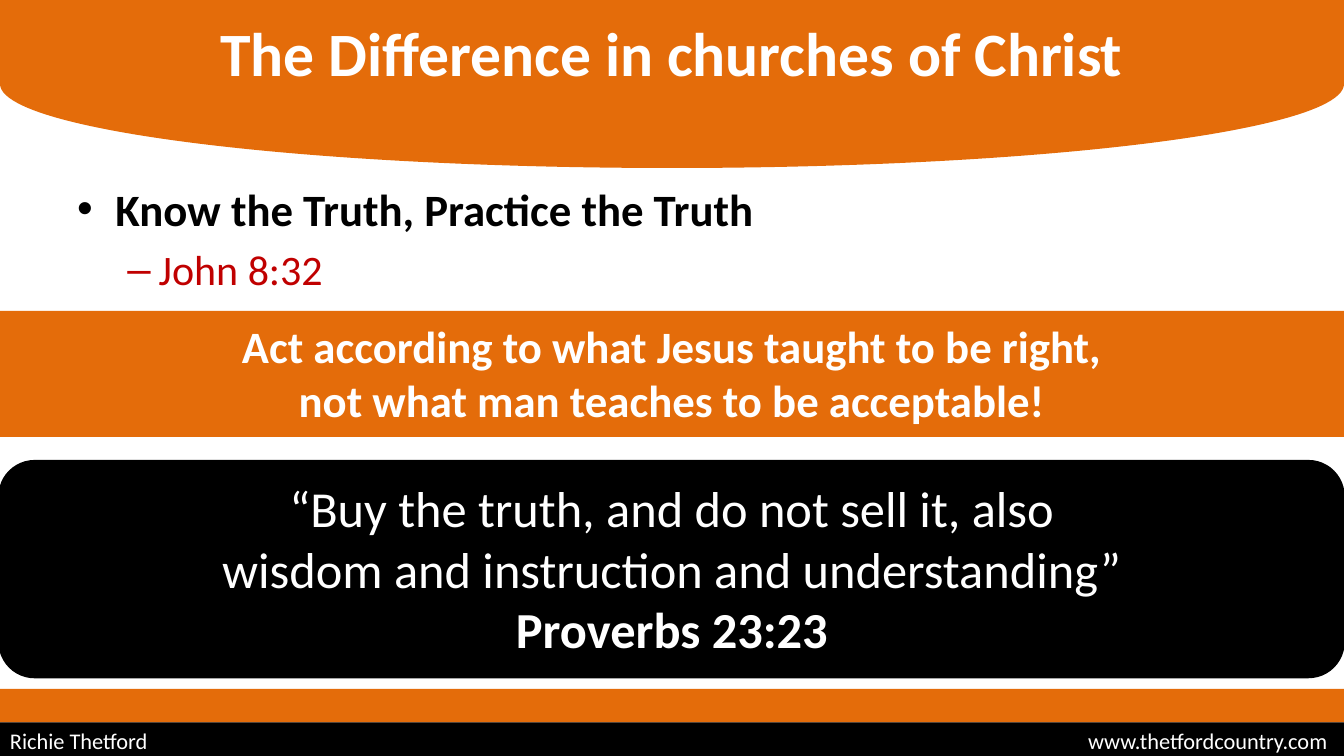
from dataclasses import dataclass

from lxml import etree
from pptx import Presentation
from pptx.dml.color import RGBColor
from pptx.enum.shapes import MSO_SHAPE
from pptx.enum.text import MSO_ANCHOR, PP_ALIGN
from pptx.oxml.ns import qn
from pptx.util import Inches, Pt

RECTANGLE = MSO_SHAPE.RECTANGLE
ROUNDED = MSO_SHAPE.ROUNDED_RECTANGLE
DELAY = MSO_SHAPE.FLOWCHART_DELAY
LEFT, CENTER = PP_ALIGN.LEFT, PP_ALIGN.CENTER
TOP, MIDDLE = MSO_ANCHOR.TOP, MSO_ANCHOR.MIDDLE

COLUMNS, ROWS = 160, 90
CELL = Inches(1) // 12


@dataclass(frozen=True)
class Theme:
    font: str = "Calibri"
    orange: str = "E46C0A"
    black: str = "000000"
    white: str = "FFFFFF"
    red: str = "C00000"
    title: int = 44
    quote: int = 36
    point: int = 32
    reference: int = 30
    footer: int = 16


THEME = Theme()


@dataclass(frozen=True)
class Area:
    column: float
    row: float
    columns: float
    rows: float

    def lengths(self) -> tuple:
        grid = (self.column, self.row, self.columns, self.rows)
        return tuple(round(value * CELL) for value in grid)


@dataclass(frozen=True)
class Band:
    area: Area
    color: str
    kind: int = RECTANGLE
    rotation: int = 0


@dataclass(frozen=True)
class Bullet:
    mark: str
    margin: float
    hanging: float
    level: int = 0


def draw_band(page, band: Band):
    box = page.shapes.add_shape(band.kind, *band.area.lengths())
    box.shadow.inherit = False
    box.rotation = band.rotation
    box.fill.solid()
    box.fill.fore_color.rgb = RGBColor.from_string(band.color)
    box.line.fill.background()
    return box


def add_text_box(page, area: Area, anchor=TOP):
    box = page.shapes.add_textbox(*area.lengths())
    box.text_frame.word_wrap = True
    box.text_frame.vertical_anchor = anchor
    return box


def write(box, text: str, *, size: int, color: str = THEME.white,
          bold: bool = False, align=CENTER, before: float = 0):
    frame = box.text_frame
    para = frame.paragraphs[0]
    if para.runs:
        para = frame.add_paragraph()
    para.alignment = align
    para.space_before = Pt(before)
    for index, line in enumerate(text.split("\n")):
        if index:
            para.add_line_break()
        span = para.add_run()
        span.text = line
        span.font.name = THEME.font
        span.font.size = Pt(size)
        span.font.bold = bold
        span.font.color.rgb = RGBColor.from_string(color)
    return para


def set_bullet(para, bullet: Bullet) -> None:
    para.level = bullet.level
    properties = para._p.get_or_add_pPr()
    properties.set("marL", str(Inches(bullet.margin)))
    properties.set("indent", str(-Inches(bullet.hanging)))
    etree.SubElement(properties, qn("a:buFont")).set("typeface", "Arial")
    etree.SubElement(properties, qn("a:buChar")).set("char", bullet.mark)


def set_right_tab(para, position: float) -> None:
    stops = etree.SubElement(para._p.get_or_add_pPr(), qn("a:tabLst"))
    stop = etree.SubElement(stops, qn("a:tab"))
    stop.set("pos", str(Inches(position)))
    stop.set("algn", "r")


def draw_points(page) -> None:
    box = add_text_box(page, Area(8, 21, 144, 64))
    point = write(box, "Know the Truth, Practice the Truth", size=THEME.point,
                  color=THEME.black, bold=True, align=LEFT)
    set_bullet(point, Bullet("•", 0.38, 0.38))
    reference = write(box, "John 8:32", size=THEME.reference,
                      color=THEME.red, align=LEFT, before=6)
    set_bullet(reference, Bullet("–", 0.81, 0.31, level=1))


def draw_quote(page) -> None:
    draw_band(page, Band(Area(-0.2, 54.75, 160.3, 26), THEME.black, ROUNDED))
    box = add_text_box(page, Area(8, 56.25, 144, 23))
    write(box, "“Buy the truth, and do not sell it, also\n"
               "wisdom and instruction and understanding”", size=THEME.quote)
    write(box, "Proverbs 23:23", size=THEME.quote, bold=True)


def draw_message(page) -> None:
    draw_band(page, Band(Area(0, 37, COLUMNS, 15), THEME.orange))
    box = add_text_box(page, Area(0, 37.4, COLUMNS, 14.2))
    write(box, "Act according to what Jesus taught to be right,\n"
               "not what man teaches to be acceptable!", size=THEME.point, bold=True)


def draw_header(page) -> None:
    depth = 20
    column, row = (COLUMNS - depth) / 2, (depth - COLUMNS) / 2
    draw_band(page, Band(Area(column, row, depth, COLUMNS), THEME.orange, DELAY, 90))
    box = add_text_box(page, Area(0, 1.4, COLUMNS, 9.6), MIDDLE)
    write(box, "The Difference in churches of Christ", size=THEME.title, bold=True)


def draw_footer(page) -> None:
    draw_band(page, Band(Area(0, 82, COLUMNS, 4), THEME.orange))
    box = draw_band(page, Band(Area(0, 86, COLUMNS, 4.4), THEME.black))
    box.text_frame.vertical_anchor = TOP
    para = write(box, "Richie Thetford\twww.thetfordcountry.com",
                 size=THEME.footer, align=LEFT)
    set_right_tab(para, 13.07)


def main() -> None:
    deck = Presentation()
    deck.slide_width, deck.slide_height = COLUMNS * CELL, ROWS * CELL
    page = deck.slides.add_slide(deck.slide_layouts[6])
    for draw in (draw_points, draw_quote, draw_message, draw_header, draw_footer):
        draw(page)
    deck.save("out.pptx")


if __name__ == "__main__":
    main()
